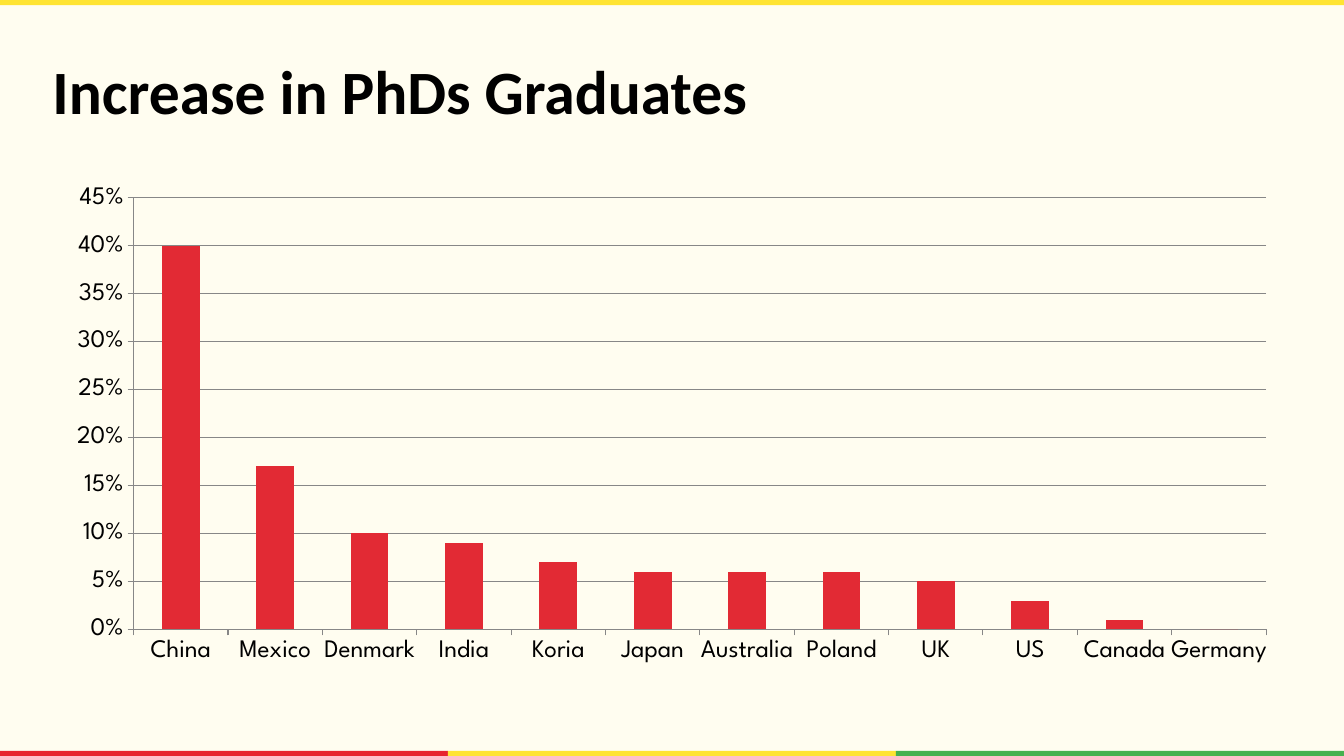
from pptx import Presentation
from pptx.chart.data import CategoryChartData
from pptx.dml.color import RGBColor
from pptx.enum.chart import XL_CHART_TYPE, XL_TICK_MARK
from pptx.enum.shapes import MSO_SHAPE
from pptx.enum.text import MSO_ANCHOR
from pptx.util import Inches, Pt

RECTANGLE = MSO_SHAPE.RECTANGLE
STACKED_COLUMNS = XL_CHART_TYPE.COLUMN_STACKED
TICK_OUTSIDE = XL_TICK_MARK.OUTSIDE
MIDDLE = MSO_ANCHOR.MIDDLE

CREAM = RGBColor(0xFF, 0xFD, 0xF0)
RED = RGBColor(0xE7, 0x24, 0x2D)
YELLOW = RGBColor(0xFF, 0xE4, 0x33)
GREEN = RGBColor(0x45, 0xB1, 0x4F)
COLUMN_RED = RGBColor(0xE2, 0x2A, 0x34)
BLACK = RGBColor(0, 0, 0)
GRAY = RGBColor(0x87, 0x87, 0x87)

WIDTH, HEIGHT = Inches(13.33), Inches(7.5)
MARGIN = Inches(0.52)
CONTENT_WIDTH = WIDTH - 2 * MARGIN
STRIPE_HEIGHT = Inches(0.05)

GROWTH = {
    "China": 0.4, "Mexico": 0.17, "Denmark": 0.1, "India": 0.09,
    "Koria": 0.07, "Japan": 0.06, "Australia": 0.06, "Poland": 0.06,
    "UK": 0.05, "US": 0.03, "Canada": 0.01, "Germany": 0,
}


def add_stripes(slide, top, colors):
    """Divide the slide's width equally between coloured stripes."""
    stripe_width = WIDTH / len(colors)
    for column, color in enumerate(colors):
        stripe = slide.shapes.add_shape(
            RECTANGLE, round(column * stripe_width), top,
            round(stripe_width), STRIPE_HEIGHT)
        stripe.shadow.inherit = False
        stripe.fill.solid()
        stripe.fill.fore_color.rgb = color
        stripe.line.fill.background()


def add_title(slide, text):
    title = slide.shapes.add_textbox(
        MARGIN, MARGIN, CONTENT_WIDTH, Inches(0.74))
    frame = title.text_frame
    frame.word_wrap = True
    frame.vertical_anchor = MIDDLE
    frame.margin_left = frame.margin_right = 0
    frame.margin_top = frame.margin_bottom = 0
    frame.text = text
    font = frame.paragraphs[0].runs[0].font
    font.name, font.size, font.bold = "Calibri", Pt(44), True
    font.color.rgb = BLACK


def style_axis(axis):
    axis.major_tick_mark = TICK_OUTSIDE
    axis.format.line.color.rgb = GRAY
    axis.format.line.width = Pt(0.75)


def add_growth_chart(slide, growth):
    data = CategoryChartData(number_format="0%")
    data.categories = list(growth)
    data.add_series("Series 1", list(growth.values()))
    chart = slide.shapes.add_chart(
        STACKED_COLUMNS, MARGIN, Inches(1.75),
        CONTENT_WIDTH, Inches(4.92), data).chart
    chart.has_legend = False
    chart.has_title = False
    chart.font.name, chart.font.size = "League Spartan", Pt(18)
    chart.font.color.rgb = BLACK

    # Columns
    plot = chart.plots[0]
    plot.gap_width, plot.overlap = 150, 100
    plot.vary_by_categories = False
    fill = plot.series[0].format.fill
    fill.solid()
    fill.fore_color.rgb = COLUMN_RED

    # Axes and gridlines
    style_axis(chart.category_axis)
    value_axis = chart.value_axis
    style_axis(value_axis)
    value_axis.minimum_scale, value_axis.maximum_scale = 0, 0.45
    value_axis.major_unit = 0.05
    value_axis.tick_labels.number_format = "0%"
    value_axis.tick_labels.number_format_is_linked = False
    value_axis.has_major_gridlines = True
    gridline = value_axis.major_gridlines.format.line
    gridline.color.rgb = GRAY
    gridline.width = Pt(0.75)


def main():
    presentation = Presentation()
    presentation.slide_width, presentation.slide_height = WIDTH, HEIGHT
    slide = presentation.slides.add_slide(presentation.slide_layouts[6])
    slide.background.fill.solid()
    slide.background.fill.fore_color.rgb = CREAM

    # Edge stripes
    add_stripes(slide, HEIGHT - STRIPE_HEIGHT, [RED, YELLOW, GREEN])
    add_stripes(slide, 0, [YELLOW])

    # Content
    add_title(slide, "Increase in PhDs Graduates")
    add_growth_chart(slide, GROWTH)
    presentation.save("out.pptx")


if __name__ == "__main__":
    main()
